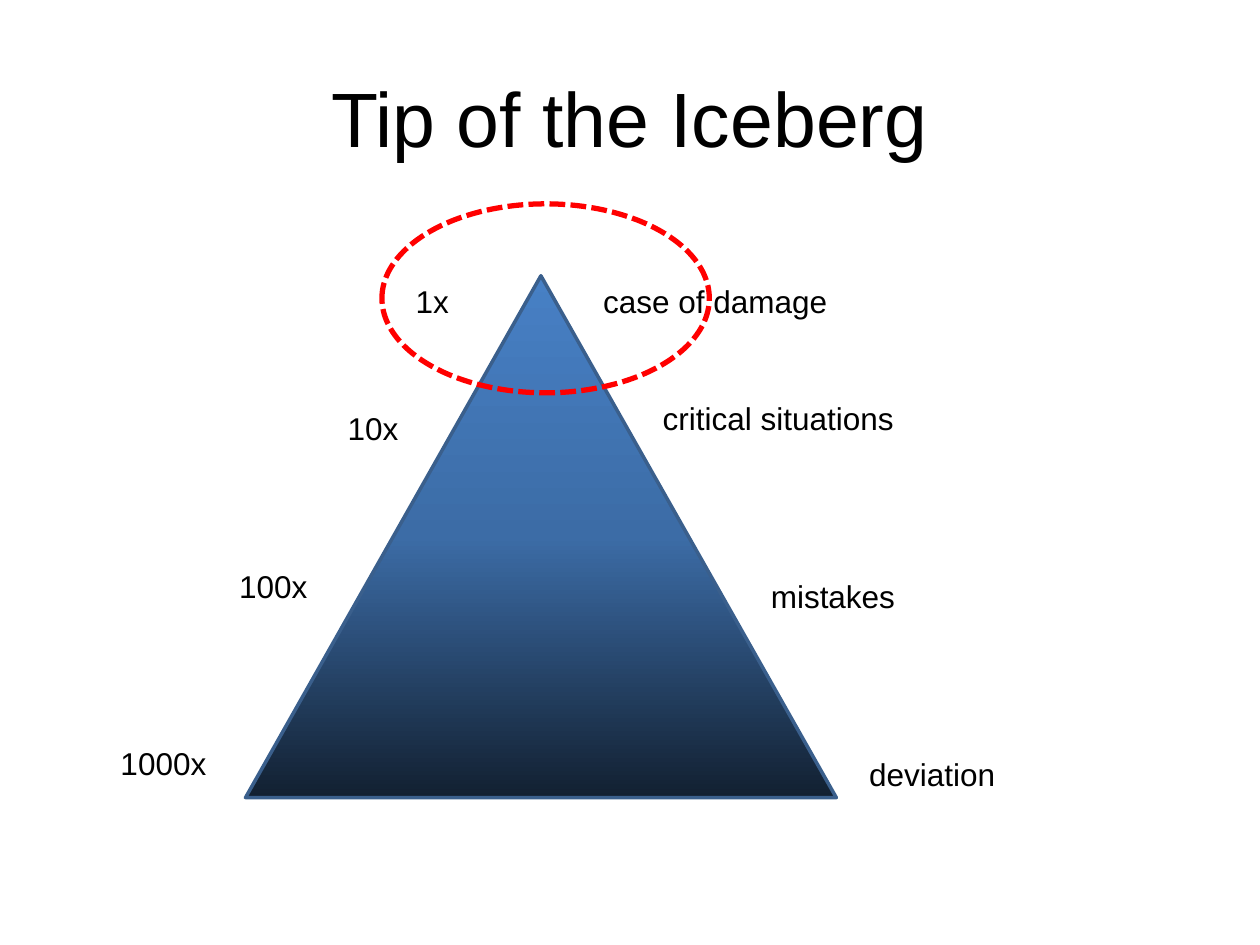
import copy
from dataclasses import dataclass

import pptx
import pptx.dml.color
import pptx.enum.dml
import pptx.enum.shapes
import pptx.enum.text
import pptx.oxml.ns
import pptx.util
from pptx.util import Cm


@dataclass(frozen=True)
class Theme:
    font: str = "Arial"
    title_size: int = 44
    label_size: int = 18
    text: str = "000000"
    outline: str = "3A5F8C"
    highlight: str = "FF0000"
    depths: tuple = ((0, "122031"), (0.5, "3C6CA6"), (1, "4780C5"))


theme = Theme()
rgb = pptx.dml.color.RGBColor.from_string
presentation = pptx.Presentation()
presentation.slide_width = Cm(25.4)
presentation.slide_height = Cm(19.05)
slide = presentation.slides.add_slide(presentation.slide_layouts[6])


def add_text(wording, left, top, width, height, size):
    box = slide.shapes.add_textbox(Cm(left), Cm(top), Cm(width), Cm(height))
    box.text_frame.word_wrap = True
    run = box.text_frame.paragraphs[0].add_run()
    run.text = wording
    run.font.name = theme.font
    run.font.size = pptx.util.Pt(size)
    run.font.color.rgb = rgb(theme.text)
    return box.text_frame


title = add_text("Tip of the Iceberg", 1.27, 0.76, 22.86, 3.18, theme.title_size)
title.vertical_anchor = pptx.enum.text.MSO_ANCHOR.MIDDLE
title.paragraphs[0].alignment = pptx.enum.text.PP_ALIGN.CENTER

# Iceberg, dark at the base and lighter towards the tip
iceberg = slide.shapes.add_shape(
    pptx.enum.shapes.MSO_SHAPE.ISOSCELES_TRIANGLE,
    Cm(4.95), Cm(5.56), Cm(11.91), Cm(10.52))
iceberg.shadow.inherit = False
iceberg.line.color.rgb = rgb(theme.outline)
iceberg.line.width = pptx.util.Pt(2)
iceberg.fill.gradient()
iceberg.fill.gradient_angle = 90
stop_list = next(iceberg.element.spPr.iter(pptx.oxml.ns.qn("a:gsLst")))
stop_list.append(copy.deepcopy(stop_list[-1]))
for stop, (position, color) in zip(iceberg.fill.gradient_stops, theme.depths):
    stop.position = position
    stop.color.rgb = rgb(color)

# Frequencies on the left slope, events on the right: wording, left, top, width
labels = [
    ("1x", 8.13, 5.56, 1.4),
    ("10x", 6.76, 8.13, 1.78),
    ("100x", 4.57, 11.3, 2.18),
    ("1000x", 2.18, 14.88, 2.59),
    ("critical situations", 13.11, 7.92, 5.94),
    ("deviation", 17.27, 15.09, 3.18),
    ("case of damage", 11.91, 5.56, 5.77),
    ("mistakes", 15.29, 11.51, 3.38),
]
for wording, left, top, width in labels:
    label = add_text(wording, left, top, width, 1.02, theme.label_size)
    label.auto_size = pptx.enum.text.MSO_AUTO_SIZE.SHAPE_TO_FIT_TEXT

visible_tip = slide.shapes.add_shape(
    pptx.enum.shapes.MSO_SHAPE.OVAL, Cm(7.7), Cm(4.11), Cm(6.6), Cm(3.81))
visible_tip.shadow.inherit = False
visible_tip.fill.background()
visible_tip.line.color.rgb = rgb(theme.highlight)
visible_tip.line.width = pptx.util.Pt(3)
# SQUARE_DOT is the preset written as sysDash
visible_tip.line.dash_style = pptx.enum.dml.MSO_LINE.SQUARE_DOT

presentation.save("out.pptx")
